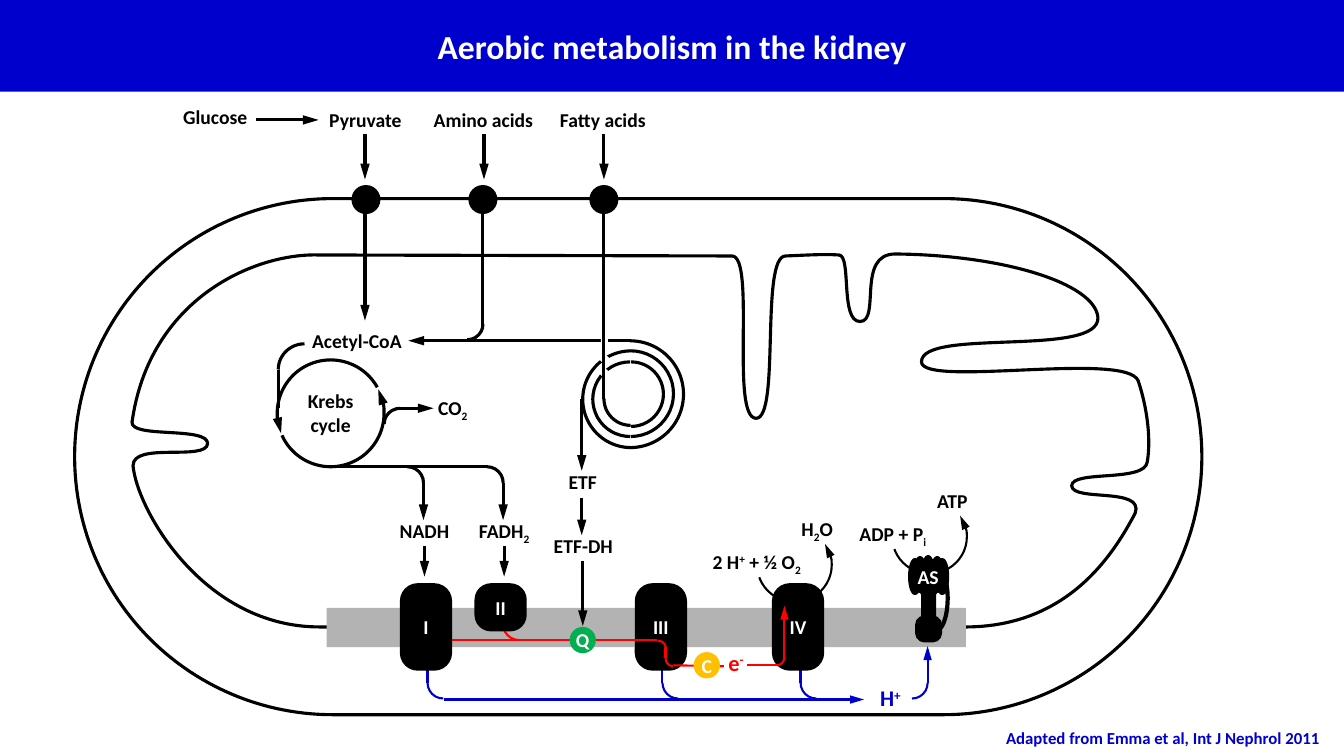
from lxml import etree
from pptx import Presentation
from pptx.dml.color import RGBColor
from pptx.enum.shapes import MSO_CONNECTOR, MSO_SHAPE
from pptx.enum.text import MSO_ANCHOR, MSO_AUTO_SIZE, PP_ALIGN
from pptx.oxml.ns import qn
from pptx.util import Inches, Pt

BLACK, WHITE, GREY = "000000", "FFFFFF", "B3B3B3"
BLUE, RED, GREEN, AMBER = "0000CC", "FF0000", "00B050", "FFC000"
BASELINES = {"_": "-25000", "^": "30000"}
HALF_TURN = (215.97, 107.95)

INNER_MEMBRANE = [
    (2.06, 4.4), (2.06, 4.23, 1.3, 4.35, 1.31, 4.19), (1.48, 2.96, 2.53, 2.51, 3.16, 2.53),
    (7.26, 2.54), (7.5, 2.54, 7.24, 4.15, 7.5, 4.15), (7.74, 4.15, 7.54, 2.55, 7.79, 2.54),
    (8.03, 2.53, 8.18, 2.52, 8.32, 2.53), (8.45, 2.53, 8.33, 3.19, 8.53, 3.19),
    (8.74, 3.19, 8.49, 2.52, 8.88, 2.52), (9.95, 2.53, 10.86, 2.81, 10.89, 3.15),
    (10.91, 3.55, 9.14, 3.25, 9.14, 3.59), (9.14, 3.85, 11.18, 3.48, 11.29, 3.78),
    (11.37, 4.02, 11.42, 4.33, 11.38, 4.58), (11.36, 4.79, 10.63, 4.66, 10.63, 4.82),
    (10.64, 4.98, 11.35, 4.83, 11.26, 5.09), (11.01, 5.57, 10.54, 6.23, 9.55, 6.22),
    (3.17, 6.22), (2.02, 6.22, 1.36, 5.06, 1.32, 4.62), (1.32, 4.38, 2.05, 4.58, 2.06, 4.4),
]


def color(value):
    return RGBColor.from_string(value)


def style_line(line, line_color, width, arrow=False):
    line.color.rgb = color(line_color)
    line.width = Pt(width)
    if arrow:
        etree.SubElement(line._get_or_add_ln(), qn("a:tailEnd"), type="triangle", w="med", len="lg")


def style_shape(shape, fill=None, line=None, width=2, arrow=False):
    shape.shadow.inherit = False
    if fill:
        shape.fill.solid()
        shape.fill.fore_color.rgb = color(fill)
    else:
        shape.fill.background()
    if line:
        style_line(shape.line, line, width, arrow)
    else:
        shape.line.fill.background()


def add_shape(shapes, kind, box, adjust=(), rotation=0, flip="", **style):
    shape = shapes.add_shape(kind, *map(Inches, box))
    for index, value in enumerate(adjust):
        shape.adjustments[index] = value
    shape.rotation = rotation
    for axis in flip:
        shape._element.spPr.find(qn("a:xfrm")).set("flip" + axis, "1")
    style_shape(shape, **style)
    return shape


def add_arc(shapes, box, rotation=0, flip="", adjust=(), line=BLACK, width=2.25, arrow=False):
    return add_shape(shapes, MSO_SHAPE.ARC, box, adjust, rotation, flip,
                     line=line, width=width, arrow=arrow)


def add_line(shapes, x1, y1, x2, y2, line=BLACK, width=2.25, arrow=False):
    connector = shapes.add_connector(MSO_CONNECTOR.STRAIGHT, *map(Inches, (x1, y1, x2, y2)))
    style_line(connector.line, line, width, arrow)
    etree.SubElement(connector._element.spPr, qn("a:effectLst"))


def write_text(shape, text, size=14, font_color=BLACK, align=PP_ALIGN.CENTER,
               anchor=MSO_ANCHOR.MIDDLE, margin=None, wrap=True):
    frame = shape.text_frame
    frame.word_wrap = wrap
    frame.vertical_anchor = anchor
    if margin is not None:
        frame.margin_left = frame.margin_right = Inches(margin)
        frame.margin_top = frame.margin_bottom = Inches(margin)
    for index, content in enumerate(text.split("\n")):
        paragraph = frame.add_paragraph() if index else frame.paragraphs[0]
        paragraph.alignment = align
        for piece in content.split("|"):
            run = paragraph.add_run()
            run.text = piece.lstrip("_^")
            run.font.name = "Calibri"
            run.font.size = Pt(size)
            run.font.bold = True
            run.font.color.rgb = color(font_color)
            if piece[0] in BASELINES:
                run.font._element.set("baseline", BASELINES[piece[0]])


def add_label(shapes, text, box, wrap=False, **text_format):
    label = shapes.add_textbox(*map(Inches, box))
    write_text(label, text, anchor=MSO_ANCHOR.TOP, wrap=wrap, **text_format)
    label.text_frame.auto_size = MSO_AUTO_SIZE.SHAPE_TO_FIT_TEXT


def add_complex(shapes, text, left, height=0.84):
    block = add_shape(shapes, MSO_SHAPE.ROUNDED_RECTANGLE, (left, 5.8, 0.49, height),
                      (0.333,), fill=BLACK, line=BLACK)
    write_text(block, text, font_color=WHITE, margin=0)


def add_carrier(shapes, text, left, top, fill):
    carrier = add_shape(shapes, MSO_SHAPE.OVAL, (left, top, 0.24, 0.24), fill=fill, line=fill, width=1.5)
    write_text(carrier, text, font_color=WHITE, margin=0)


def add_curve(shapes, segments):
    units = [[round(value * 100) for value in segment] for segment in segments]
    ends = [segment[-2:] for segment in units]
    left, top = (min(axis) for axis in zip(*ends))
    builder = shapes.build_freeform(*ends[0], scale=Inches(0.01))
    builder.add_line_segments(ends[1:], close=True)
    shape = builder.convert_to_shape()
    steps = list(shape._element.iter(qn("a:lnTo")))
    for step, segment in zip(steps, units[1:]):
        if len(segment) == 6:
            step.tag = qn("a:cubicBezTo")
            for index in (0, 1):
                x, y = segment[2 * index:2 * index + 2]
                point = etree.SubElement(step, qn("a:pt"), x=str(x - left), y=str(y - top))
                step.insert(index, point)
    style_shape(shape, line=BLACK, width=2.25)


def add_title(slide):
    title = slide.shapes.title
    title.left, title.top, title.width, title.height = map(Inches, (0, 0, 13.33, 0.91))
    title.fill.solid()
    title.fill.fore_color.rgb = color(BLUE)
    write_text(title, "Aerobic metabolism in the kidney", size=24, font_color=WHITE)


def add_membranes(shapes):
    add_curve(shapes, INNER_MEMBRANE)
    add_shape(shapes, MSO_SHAPE.RECTANGLE, (3.24, 6.03, 6.34, 0.39), fill=GREY)
    add_shape(shapes, MSO_SHAPE.ROUNDED_RECTANGLE, (0.74, 1.97, 11.18, 5.12), (0.5,),
              line=BLACK, width=2.25)


def add_beta_oxidation(shapes):
    spiral = shapes.add_group_shape().shapes
    add_arc(spiral, (5.99, 3.69, 0.53, 0.53), 90, "H", (53.47, 107.95))
    for left, top, size in ((5.88, 3.59, 0.74), (5.78, 3.48, 0.96)):
        add_arc(spiral, (left, top, size, size), 90, "H", HALF_TURN)
    for left, top, size in ((5.72, 3.38, 1.06), (5.94, 3.59, 0.64), (5.83, 3.48, 0.85)):
        add_arc(spiral, (left, top, size, size), 270, adjust=HALF_TURN)
    add_line(shapes, 6.26, 3.38, 4.05, 3.38, arrow=True)
    for left, top, rotation in ((5.95, 3.65, 45), (5.96, 3.52, 45), (5.96, 3.33, 0)):
        add_shape(shapes, MSO_SHAPE.RECTANGLE, (left, top, 0.07, 0.08), rotation=rotation, fill=WHITE)
    add_line(shapes, 5.99, 3.96, 5.99, 1.97)


def add_fuel_supply(shapes):
    for x, dot_left in ((3.62, 3.5), (4.8, 4.66), (5.99, 5.86)):
        add_line(shapes, x, 1.33, x, 1.78, arrow=True)
        add_shape(shapes, MSO_SHAPE.OVAL, (dot_left, 1.85, 0.26, 0.26), fill=BLACK, line=BLACK)
    add_line(shapes, 2.54, 1.19, 3.16, 1.19, arrow=True)
    add_line(shapes, 3.62, 1.97, 3.62, 3.18, arrow=True)
    add_line(shapes, 4.79, 3.23, 4.79, 1.97)
    add_arc(shapes, (4.48, 3.06, 0.31, 0.31), 180, "H")


def add_krebs_cycle(shapes):
    for adjust in ((68.62, 178.1), (179.47, 67.13)):
        add_arc(shapes, (2.75, 3.57, 1.06, 1.06), 90, "H", adjust, arrow=True)
    add_arc(shapes, (2.76, 3.41, 0.52, 0.51), 180, "V")
    add_line(shapes, 2.76, 4.05, 2.76, 3.67)
    add_arc(shapes, (3.81, 4.05, 0.32, 0.31), 180, "V")
    add_line(shapes, 3.94, 4.05, 4.3, 4.05, arrow=True)
    add_line(shapes, 3.24, 4.63, 4.84, 4.63)
    for x in (4.2, 4.99):
        add_arc(shapes, (x - 0.32, 4.63, 0.32, 0.32), 180, "HV")
        add_line(shapes, x, 4.79, x, 5.16, arrow=True)
        add_line(shapes, x + 0.01, 5.42, x + 0.01, 5.72, arrow=True)
    for x, top, bottom in ((5.77, 3.96, 4.67), (5.77, 4.94, 5.31), (5.78, 5.57, 6.21)):
        add_line(shapes, x, top, x, bottom, arrow=True)


def add_proton_path(shapes):
    blue = {"line": BLUE, "width": 1.5}
    for x in (4.24, 6.57, 7.94):
        add_line(shapes, x, 6.18, x, 6.78, **blue)
        add_arc(shapes, (x, 6.62, 0.31, 0.31), 270, "H", **blue)
    add_line(shapes, 4.4, 6.94, 8.57, 6.94, arrow=True, **blue)
    add_arc(shapes, (8.89, 6.62, 0.31, 0.31), 180, "H", **blue)
    add_line(shapes, 9.2, 6.78, 9.2, 6.41, arrow=True, **blue)


def add_electron_path(shapes):
    red = {"line": RED, "width": 1.5}
    for ends in ((4.31, 6.35, 6.52, 6.35), (6.6, 6.42, 6.6, 6.53),
                 (6.68, 6.6, 7.18, 6.61), (7.71, 6.6, 7.41, 6.6)):
        add_line(shapes, *ends, **red)
    add_line(shapes, 7.78, 6.53, 7.78, 6.01, arrow=True, **red)
    for box, rotation, flip in (((4.99, 6.04, 0.32, 0.31), 180, ""), ((6.45, 6.35, 0.15, 0.16), 270, "V"),
                                ((6.6, 6.45, 0.15, 0.16), 180, ""), ((7.63, 6.44, 0.15, 0.16), 180, "H")):
        add_arc(shapes, box, rotation, flip, **red)


def add_atp_synthase(shapes):
    for box in ((9.09, 6.12, 0.24, 0.24), (9.15, 5.76, 0.12, 0.45)):
        add_shape(shapes, MSO_SHAPE.ROUNDED_RECTANGLE, box, (0.333,), fill=BLACK, line=BLACK)
    head = shapes.add_group_shape().shapes
    for left, top in ((9.02, 5.55), (9.11, 5.56), (9.2, 5.56), (9.29, 5.55),
                      (9.24, 5.53), (9.15, 5.52), (9.07, 5.53)):
        add_shape(head, MSO_SHAPE.OVAL, (left, top, 0.11, 0.34), fill=BLACK, line=BLACK)
    add_arc(shapes, (9.16, 5.61, 0.24, 0.65), adjust=(169.67, 53.4), width=3)
    add_label(shapes, "AS", (8.96, 5.56, 0.49, 0.34), wrap=True, font_color=WHITE)


def add_respiratory_chain(shapes):
    add_proton_path(shapes)
    add_complex(shapes, "III", 6.31)
    add_complex(shapes, "IV", 7.67)
    add_electron_path(shapes)
    add_carrier(shapes, "Q", 5.66, 6.23, GREEN)
    add_carrier(shapes, "C", 6.89, 6.48, AMBER)
    add_complex(shapes, "I", 3.98)
    add_complex(shapes, "II", 4.72, height=0.45)
    for left, top in ((7.51, 5.24), (8.85, 4.96)):
        add_arc(shapes, (left, top, 0.74, 0.73), 180, "H", (119.55, 20.74), width=1.5, arrow=True)
    add_atp_synthase(shapes)


def add_labels(shapes):
    for text, left, top, width in (
            ("Glucose", 1.71, 0.99, 0.85), ("Pyruvate", 3.16, 1.02, 0.93),
            ("Amino acids", 4.2, 1.02, 1.19), ("Fatty acids", 5.45, 1.02, 1.06),
            ("Acetyl-CoA", 2.99, 3.21, 1.1), ("CO|_2", 4.24, 3.88, 0.5),
            ("NADH", 3.86, 5.1, 0.7), ("FADH|_2", 4.64, 5.1, 0.72),
            ("ETF", 5.54, 4.61, 0.48), ("ETF-DH", 5.39, 5.25, 0.79),
            ("2 H|^+| + ½ O|_2", 6.94, 5.41, 1.13), ("H|_2|O", 7.84, 5.08, 0.53),
            ("ADP + P|_i", 8.41, 5.13, 0.89), ("ATP", 9.19, 4.8, 0.51)):
        add_label(shapes, text, (left, top, width, 0.34))
    add_label(shapes, "Krebs\ncycle", (2.95, 3.81, 0.66, 0.57))
    add_label(shapes, "H|^+", (8.62, 6.74, 0.42, 0.37), size=16, font_color=BLUE)
    add_label(shapes, "e|^-", (7.12, 6.39, 0.36, 0.37), size=16, font_color=RED)
    add_label(shapes, "Adapted from Emma et al, Int J Nephrol 2011", (9.88, 7.17, 3.43, 0.3),
              size=12, font_color=BLUE, align=PP_ALIGN.LEFT)


def main():
    presentation = Presentation()
    presentation.slide_width, presentation.slide_height = Inches(13.33), Inches(7.5)
    slide = presentation.slides.add_slide(presentation.slide_layouts[5])
    add_title(slide)
    for add_part in (add_membranes, add_beta_oxidation, add_fuel_supply, add_krebs_cycle,
                     add_respiratory_chain, add_labels):
        add_part(slide.shapes)
    presentation.save("out.pptx")


if __name__ == "__main__":
    main()
